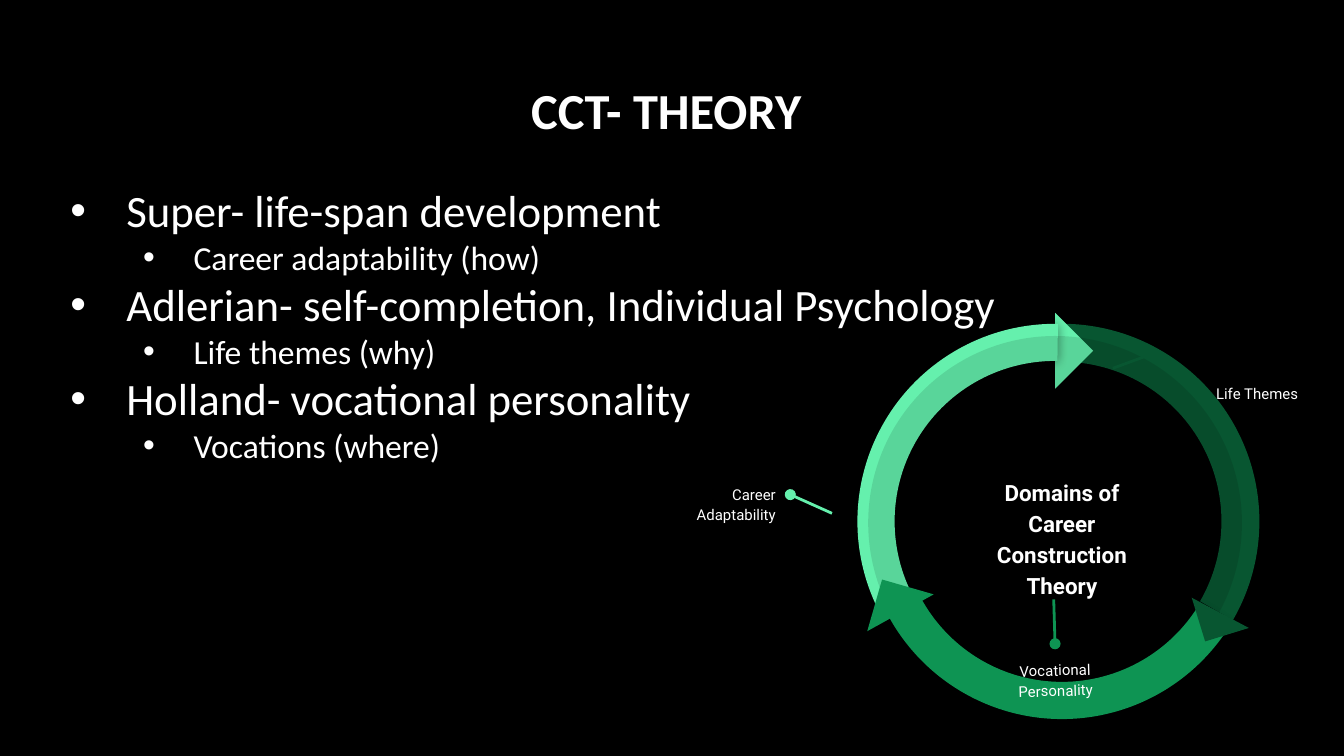
from dataclasses import dataclass

from lxml.etree import SubElement
from pptx import Presentation
from pptx.dml.color import RGBColor as Color
from pptx.enum.shapes import MSO_CONNECTOR as Connector, MSO_SHAPE as Preset
from pptx.enum.text import MSO_ANCHOR as Anchor, MSO_AUTO_SIZE as AutoSize, PP_ALIGN as Align
from pptx.oxml.ns import qn
from pptx.util import Pt


@dataclass(frozen=True)
class Theme:
    background: str = "000000"
    text: str = "FFFFFF"
    dark: str = "085631"
    middle: str = "0E9453"
    light: str = "65F0AD"
    heading_font: str = "Calibri"
    diagram_font: str = "Roboto"
    title_size: float = 27
    item_size: float = 24
    subitem_size: float = 18
    center_size: float = 12
    label_size: float = 8


@dataclass(frozen=True)
class Box:
    left: float
    top: float
    width: float
    height: float

    def lengths(self) -> tuple:
        return Pt(self.left), Pt(self.top), Pt(self.width), Pt(self.height)


@dataclass(frozen=True)
class Piece:
    """One filled part of the cycle; adjustments are the preset's handles."""
    preset: Preset
    box: Box
    color: str
    rotation: float = 0
    adjustments: tuple = ()
    flipped: bool = False
    shadow: bool = False
    opacity: int = 100


@dataclass(frozen=True)
class Label:
    text: str
    box: Box
    align: Align
    size: float
    bold: bool = False
    rotation: float = 0
    anchor: Anchor = Anchor.TOP


@dataclass(frozen=True)
class Leader:
    start: tuple
    end: tuple
    color: str


THEME = Theme()
RING, ARC_TOP = 211.7, 173.5
TITLE_BOX = Box(24.5, 35.3, 671, 45.4)
BODY_BOX = Box(24.5, 90.7, 671, 269.3)

THEORIES = [
    ("Super- life-span development", "Career adaptability (how)"),
    ("Adlerian- self-completion, Individual Psychology", "Life themes (why)"),
    ("Holland- vocational personality", "Vocations (where)"),
]


def arc(left: float, color: str, rotation: float, adjustments: tuple, flipped: bool) -> Piece:
    return Piece(Preset.BLOCK_ARC, Box(left, ARC_TOP, RING, RING), color,
                 rotation, adjustments, flipped, shadow=True)


def arrowhead(left: float, top: float, side: float, color: str, rotation: float) -> Piece:
    return Piece(Preset.RIGHT_TRIANGLE, Box(left, top, side, side), color, rotation)


PIECES = [
    arc(463, THEME.dark, 30, (144.144, 0.007, 0.096), False),
    arrowhead(550.8, 173.5, 28.8, THEME.light, 225),
    arc(459.4, THEME.light, 330, (143.486, 214.729, 0.094), True),
    Piece(Preset.DONUT, Box(465.1, 180, 200.2, 200.2), THEME.background,
          adjustments=(0.161,), opacity=11),
    arc(463, THEME.middle, 210, (143.162, 215.027, 0.094), True),
    arrowhead(641.5, 316.1, 24.5, THEME.dark, 342.9),
    arrowhead(468, 313.9, 28.8, THEME.middle, 106),
]
LEADERS = [
    Leader((423.4, 265), (445.7, 275), THEME.light),
    Leader((617.8, 189.4), (596.2, 197.3), THEME.dark),
    Leader((565.2, 344.9), (564.5, 321.1), THEME.middle),
]
LABELS = [
    Label("Career Adaptability", Box(345.8, 251.3, 77, 27.4), Align.RIGHT, THEME.label_size),
    Label("Life Themes", Box(644.4, 197.3, 74.9, 22.3), Align.LEFT, THEME.label_size),
    Label("Vocational Personality", Box(518.4, 345.6, 93.6, 23.8), Align.CENTER,
          THEME.label_size, rotation=358.5),
    Label("Domains of Career Construction Theory", Box(512, 256, 113.8, 63.4),
          Align.CENTER, THEME.center_size, bold=True, anchor=Anchor.MIDDLE),
]


def place(shape, box: Box) -> None:
    shape.left, shape.top, shape.width, shape.height = box.lengths()


def prepare_frame(frame, anchor: Anchor = Anchor.TOP) -> None:
    frame.word_wrap = True
    frame.auto_size = AutoSize.NONE
    frame.vertical_anchor = anchor
    frame.margin_left = frame.margin_right = Pt(7.2)
    frame.margin_top = frame.margin_bottom = Pt(7.2)


def format_runs(para, font: str, size: float, bold: bool = False) -> None:
    for span in para.runs:
        span.font.name = font
        span.font.size = Pt(size)
        span.font.bold = bold
        span.font.color.rgb = Color.from_string(THEME.text)


def add_bullet(para, margin: float, indent: float) -> None:
    properties = para._p.get_or_add_pPr()
    properties.set("marL", str(Pt(margin)))
    properties.set("indent", str(Pt(indent)))
    bullet_color = SubElement(properties, qn("a:buClr"))
    SubElement(bullet_color, qn("a:srgbClr"), val=THEME.text)
    SubElement(properties, qn("a:buFont"), typeface="Arial")
    SubElement(properties, qn("a:buChar"), char="•")


def fill_title(title) -> None:
    place(title, TITLE_BOX)
    prepare_frame(title.text_frame)
    title.text_frame.text = "CCT- THEORY "
    para = title.text_frame.paragraphs[0]
    para.alignment = Align.CENTER
    format_runs(para, THEME.heading_font, THEME.title_size, bold=True)


def fill_body(body) -> None:
    place(body, BODY_BOX)
    frame = body.text_frame
    prepare_frame(frame)
    frame.text = "\n".join(line for pair in THEORIES for line in pair)
    for index, para in enumerate(frame.paragraphs):
        para.level = index % 2
        para.space_before = Pt(0)
        if para.level:
            add_bullet(para, 72, -27)
            format_runs(para, THEME.heading_font, THEME.subitem_size)
        else:
            add_bullet(para, 36, -30)
            format_runs(para, THEME.heading_font, THEME.item_size)


def add_piece(slide, piece: Piece) -> None:
    shape = slide.shapes.add_shape(piece.preset, *piece.box.lengths())
    for index, value in enumerate(piece.adjustments):
        shape.adjustments[index] = value
    shape.rotation = piece.rotation
    shape.fill.solid()
    shape.fill.fore_color.rgb = Color.from_string(piece.color)
    shape.line.fill.background()
    shape.shadow.inherit = False
    properties = shape._element.spPr
    if piece.flipped:
        properties.find(qn("a:xfrm")).set("flipH", "1")
    if piece.opacity < 100:
        fill_color = properties.find(qn("a:solidFill")).find(qn("a:srgbClr"))
        SubElement(fill_color, qn("a:alpha"), val=str(piece.opacity * 1000))
    if piece.shadow:
        shadow = SubElement(properties.find(qn("a:effectLst")), qn("a:outerShdw"),
                            blurRad=str(Pt(5.6)), dist=str(Pt(0.8)), dir="5400000",
                            algn="ctr", rotWithShape="0")
        shadow_color = SubElement(shadow, qn("a:srgbClr"), val=THEME.background)
        SubElement(shadow_color, qn("a:alpha"), val="40000")


def add_leader(slide, leader: Leader) -> None:
    ends = [Pt(value) for value in leader.start + leader.end]
    line = slide.shapes.add_connector(Connector.STRAIGHT, *ends)
    line.line.color.rgb = Color.from_string(leader.color)
    line.line.width = Pt(1.5)
    SubElement(line.line._get_or_add_ln(), qn("a:headEnd"), type="oval")
    SubElement(line._element.spPr, qn("a:effectLst"))


def add_label(slide, label: Label) -> None:
    box = slide.shapes.add_textbox(*label.box.lengths())
    box.rotation = label.rotation
    prepare_frame(box.text_frame, label.anchor)
    box.text_frame.text = label.text
    para = box.text_frame.paragraphs[0]
    para.alignment = label.align
    para.line_spacing = 1.15
    format_runs(para, THEME.diagram_font, label.size, label.bold)


def main() -> None:
    deck = Presentation()
    deck.slide_width, deck.slide_height = Pt(720), Pt(405)
    slide = deck.slides.add_slide(deck.slide_layouts[1])
    slide.background.fill.solid()
    slide.background.fill.fore_color.rgb = Color.from_string(THEME.background)
    fill_title(slide.shapes.title)
    fill_body(slide.placeholders[1])
    for piece in PIECES:
        add_piece(slide, piece)
    for leader in LEADERS:
        add_leader(slide, leader)
    for label in LABELS:  # last, so that no arc hides a word
        add_label(slide, label)
    deck.save("out.pptx")


if __name__ == "__main__":
    main()
